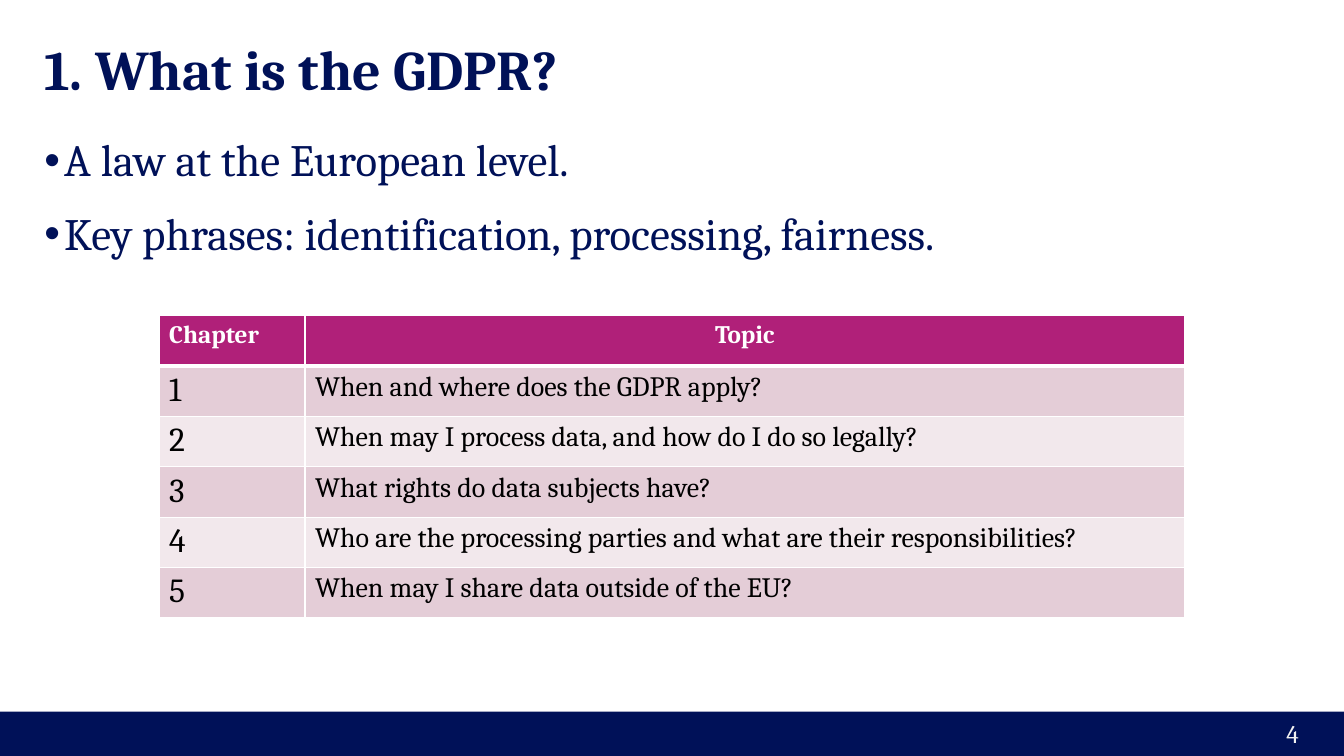
from dataclasses import dataclass
from typing import Any

from lxml import etree
from pptx import Presentation
from pptx.dml.color import RGBColor
from pptx.enum.shapes import MSO_SHAPE
from pptx.enum.text import MSO_ANCHOR, PP_ALIGN
from pptx.oxml.ns import qn
from pptx.util import Cm, Pt

RECT = MSO_SHAPE.RECTANGLE
TOP, MIDDLE = MSO_ANCHOR.TOP, MSO_ANCHOR.MIDDLE
LEFT, CENTER, RIGHT = PP_ALIGN.LEFT, PP_ALIGN.CENTER, PP_ALIGN.RIGHT

FONT = "Cambria"
COLORS = {
    "navy": "001158",
    "magenta": "B02079",
    "band_dark": "E4CDD7",
    "band_light": "F2E8EC",
    "white": "FFFFFF",
    "black": "000000",
    "page": "F2F2F2",
}
BULLETS = [
    "A law at the European level.",
    "Key phrases: identification, processing, fairness.",
]
TOPICS = [
    "When and where does the GDPR apply?",
    "When may I process data, and how do I do so legally?",
    "What rights do data subjects have?",
    "Who are the processing parties and what are their responsibilities?",
    "When may I share data outside of the EU?",
]


@dataclass
class Style:
    size: int
    color: str
    bold: bool = False
    align: Any = LEFT


@dataclass
class TextBox:
    left: float
    top: float
    width: float
    height: float
    lines: list[str]
    style: Style
    anchor: Any = MIDDLE
    margin: float = 0
    bullets: bool = False


HEADER = Style(18, "white", True)
HEADER_CENTERED = Style(18, "white", True, CENTER)
NUMBER = Style(24, "black")
TOPIC = Style(20, "black")

TEXT_BOXES = [
    TextBox(1.12, 1.12, 31.65, 1.19, ["1. What is the GDPR?"], Style(40, "navy", True)),
    TextBox(1.12, 3.48, 31.65, 13.31, BULLETS, Style(32, "navy"), TOP, bullets=True),
    TextBox(25.37, 17.98, 7.62, 1.02, ["4"], Style(18, "page", align=RIGHT), margin=0.25),
]


def rgb(name: str) -> RGBColor:
    return RGBColor.from_string(COLORS[name])


def set_all(obj: Any, values: dict[str, Any]) -> None:
    for name, value in values.items():
        setattr(obj, name, value)


def write(p: Any, text: str, style: Style) -> None:
    p.alignment = style.align
    r = p.add_run()
    r.text = text
    set_all(r.font, {"name": FONT, "size": Pt(style.size), "bold": style.bold})
    r.font.color.rgb = rgb(style.color)


def add_bullet(p: Any, color: str) -> None:
    pPr = p._p.get_or_add_pPr()
    pPr.set("marL", str(int(Cm(0.5))))
    pPr.set("indent", str(-int(Cm(0.5))))
    bu_color = etree.SubElement(pPr, qn("a:buClr"))
    etree.SubElement(bu_color, qn("a:srgbClr"), val=COLORS[color])
    etree.SubElement(pPr, qn("a:buFont"), typeface="Arial")
    etree.SubElement(pPr, qn("a:buChar"), char="•")


def add_text(s: Any, box: TextBox) -> None:
    sp = s.shapes.add_textbox(Cm(box.left), Cm(box.top), Cm(box.width), Cm(box.height))
    tf = sp.text_frame
    side, edge = Cm(box.margin), Cm(box.margin / 2)
    set_all(tf, {
        "word_wrap": True, "vertical_anchor": box.anchor,
        "margin_left": side, "margin_right": side,
        "margin_top": edge, "margin_bottom": edge,
    })
    for i, line in enumerate(box.lines):
        p = tf.add_paragraph() if i else tf.paragraphs[0]
        if box.bullets:
            set_all(p, {"line_spacing": 0.9, "space_before": Pt(6 if i else 0),
                        "space_after": Pt(12)})
            add_bullet(p, box.style.color)
        write(p, line, box.style)


def set_borders(cell: Any, top: int, bottom: int) -> None:
    tcPr = cell._tc.get_or_add_tcPr()
    widths = {"lnL": 1, "lnR": 1, "lnT": top, "lnB": bottom}
    for i, (side, width) in enumerate(widths.items()):
        ln = etree.Element(qn(f"a:{side}"), w=str(int(Pt(width))))
        fill = etree.SubElement(ln, qn("a:solidFill"))
        etree.SubElement(fill, qn("a:srgbClr"), val=COLORS["white"])
        tcPr.insert(i, ln)


def add_chapter_table(s: Any) -> None:
    rows = [[("Chapter", HEADER), ("Topic", HEADER_CENTERED)]]
    rows += [[(str(n), NUMBER), (topic, TOPIC)] for n, topic in enumerate(TOPICS, 1)]
    widths = [3.68, 22.17]
    row_height = 1.27
    table = s.shapes.add_table(
        len(rows), len(widths), Cm(4.01), Cm(7.95),
        Cm(sum(widths)), Cm(row_height * len(rows)),
    ).table
    for column, width in zip(table.columns, widths):
        column.width = Cm(width)
    for i, row in enumerate(rows):
        table.rows[i].height = Cm(row_height)
        fill = "magenta" if i == 0 else "band_dark" if i % 2 else "band_light"
        for j, (text, style) in enumerate(row):
            cell = table.cell(i, j)
            cell.fill.solid()
            cell.fill.fore_color.rgb = rgb(fill)
            set_borders(cell, 3 if i == 1 else 1, 3 if i == 0 else 1)
            write(cell.text_frame.paragraphs[0], text, style)


def add_footer(s: Any) -> None:
    bar = s.shapes.add_shape(RECT, Cm(0), Cm(17.93), Cm(33.88), Cm(1.12))
    bar.shadow.inherit = False
    bar.fill.solid()
    bar.fill.fore_color.rgb = rgb("navy")
    bar.line.fill.background()


def main() -> None:
    prs = Presentation()
    set_all(prs, {"slide_width": Cm(33.88), "slide_height": Cm(19.05)})
    s = prs.slides.add_slide(prs.slide_layouts[6])
    add_footer(s)
    for box in TEXT_BOXES:
        add_text(s, box)
    add_chapter_table(s)
    prs.save("out.pptx")


if __name__ == "__main__":
    main()
